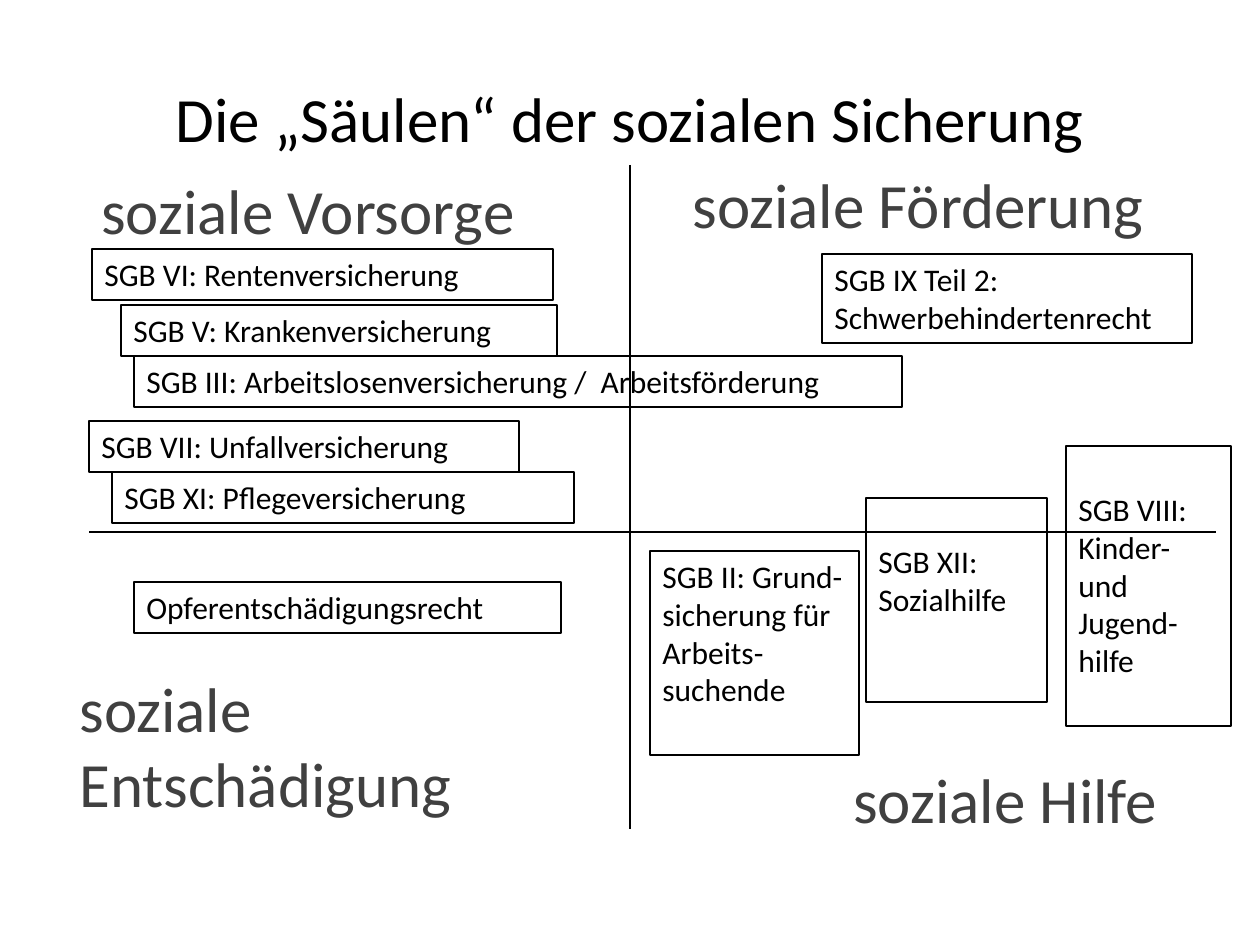
from dataclasses import dataclass

from pptx import Presentation
from pptx.dml.color import RGBColor as Rgb
from pptx.enum.shapes import MSO_CONNECTOR as Conn, MSO_SHAPE as Shape
from pptx.enum.text import MSO_ANCHOR as Anchor, MSO_AUTO_SIZE as Auto, PP_ALIGN as Align
from pptx.oxml.ns import qn
from pptx.util import Emu, Pt
from lxml.etree import SubElement

SCALE = 914400 / 126  # EMU in one px
COLORS = {"ink": "000000", "head": "404040"}
FRAME = {"word_wrap": True, "auto_size": Auto.NONE}
ROW = 38  # height of one line of box text
PAD = 6  # usual inset above the text


@dataclass
class Label:
    text: str
    x: int
    y: int
    w: int
    h: int = 90
    color: str = "head"
    align: Align = Align.LEFT
    anchor: Anchor = Anchor.TOP


@dataclass
class Box:
    text: str
    x: int
    y: int
    w: int
    h: int = 51
    skip: int = 0  # lines left free above the text


@dataclass
class Axis:
    x1: int
    y1: int
    x2: int
    y2: int


AXES = [Axis(630, 165, 630, 829), Axis(1216, 532, 89, 532)]

LABELS = [
    Label("Die „Säulen“ der sozialen Sicherung", 63, 38, 1134, 158, "ink",
          Align.CENTER, Anchor.MIDDLE),
    Label("soziale Vorsorge", 89, 165, 515),
    Label("soziale Hilfe", 841, 754, 367),
    Label("soziale Entschädigung", 67, 663, 515, 165),
    Label("soziale Förderung", 680, 159, 535),
]

BOXES = [
    # Provision
    Box("SGB VI: Rentenversicherung", 92, 249, 461),
    Box("SGB V: Krankenversicherung", 121, 305, 436),
    Box("SGB III: Arbeitslosenversicherung /  Arbeitsförderung", 134, 356, 768),
    Box("SGB VII: Unfallversicherung", 89, 421, 430),
    Box("SGB XI: Pflegeversicherung", 112, 472, 462),
    # Compensation
    Box("Opferentschädigungsrecht", 134, 582, 427),
    # Support
    Box("SGB IX Teil 2: Schwerbehindertenrecht", 822, 254, 370, 89),
    # Assistance
    Box("SGB II: Grund-sicherung für Arbeits-suchende", 650, 551, 209, 204),
    Box("SGB XII: \vSozialhilfe", 866, 498, 181, 204, 1),
    Box("SGB VIII: Kinder- und Jugend-hilfe", 1066, 446, 165, 280, 1),
]


def px(*vals: int) -> list[Emu]:
    return [Emu(round(v * SCALE)) for v in vals]


def tint(name: str) -> Rgb:
    return Rgb.from_string(COLORS[name])


def write(shape, text: str, size: int, color: str, align: Align = Align.LEFT,
          **extra) -> None:
    frame = shape.text_frame
    for key, val in (FRAME | extra).items():
        setattr(frame, key, val)
    frame.text = text
    para = frame.paragraphs[0]
    para.alignment = align
    for run in para.runs:
        for key, val in {"name": "Calibri", "size": Pt(size)}.items():
            setattr(run.font, key, val)
        run.font.color.rgb = tint(color)


def stroke(shape) -> None:
    shape.line.color.rgb = tint("ink")
    shape.line.width = Pt(0.75)


def draw_axis(slide, axis: Axis) -> None:
    line = slide.shapes.add_connector(
        Conn.STRAIGHT, *px(axis.x1, axis.y1, axis.x2, axis.y2))
    stroke(line)
    SubElement(line._element.spPr, qn("a:effectLst"))


def draw_label(slide, item: Label) -> None:
    shape = slide.shapes.add_textbox(*px(item.x, item.y, item.w, item.h))
    write(shape, item.text, 36, item.color, item.align,
          vertical_anchor=item.anchor)


def draw_box(slide, item: Box) -> None:
    shape = slide.shapes.add_shape(
        Shape.RECTANGLE, *px(item.x, item.y, item.w, item.h))
    shape.shadow.inherit = False
    shape.fill.background()
    stroke(shape)
    write(shape, item.text, 18, "ink", vertical_anchor=Anchor.TOP,
          margin_top=px(PAD + item.skip * ROW)[0])


def main() -> None:
    deck = Presentation()
    deck.slide_width, deck.slide_height = px(1260, 945)
    slide = deck.slides.add_slide(deck.slide_layouts[6])
    for axis in AXES:
        draw_axis(slide, axis)
    for label in LABELS:
        draw_label(slide, label)
    for box in BOXES:
        draw_box(slide, box)
    deck.save("out.pptx")


if __name__ == "__main__":
    main()
